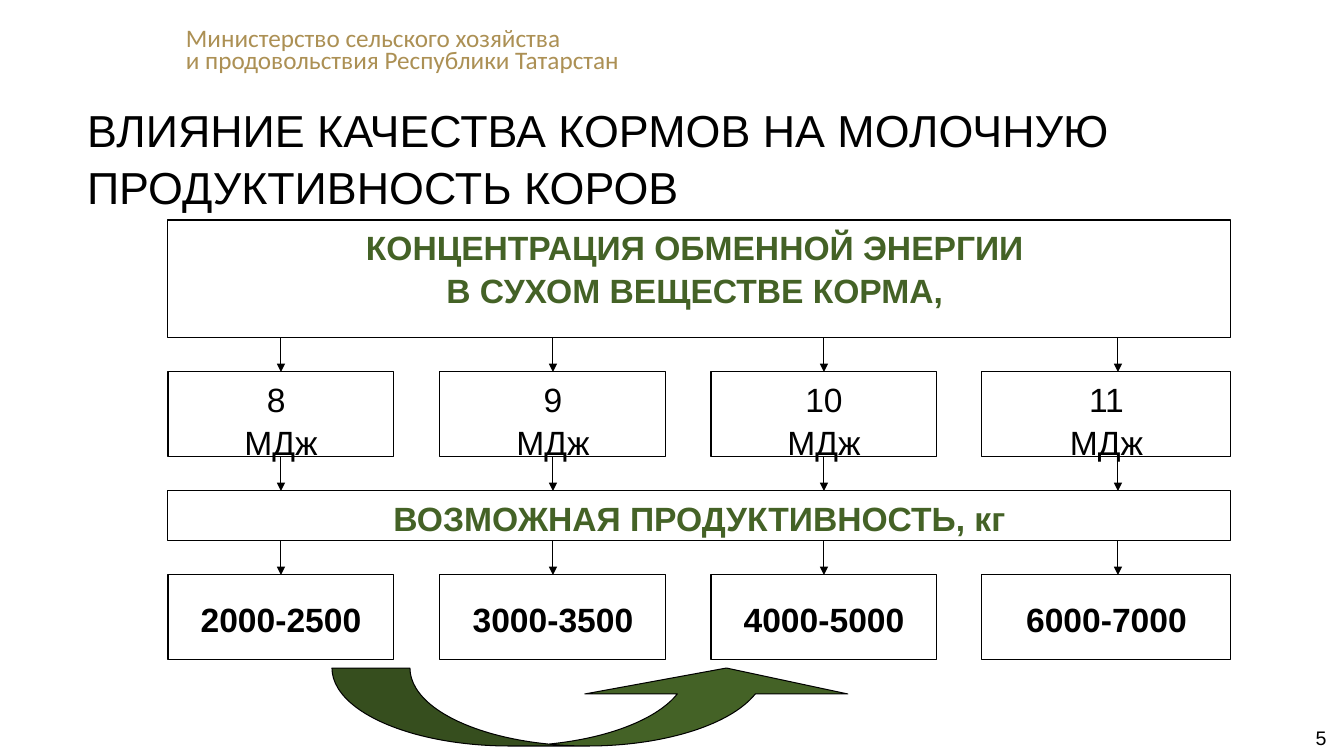
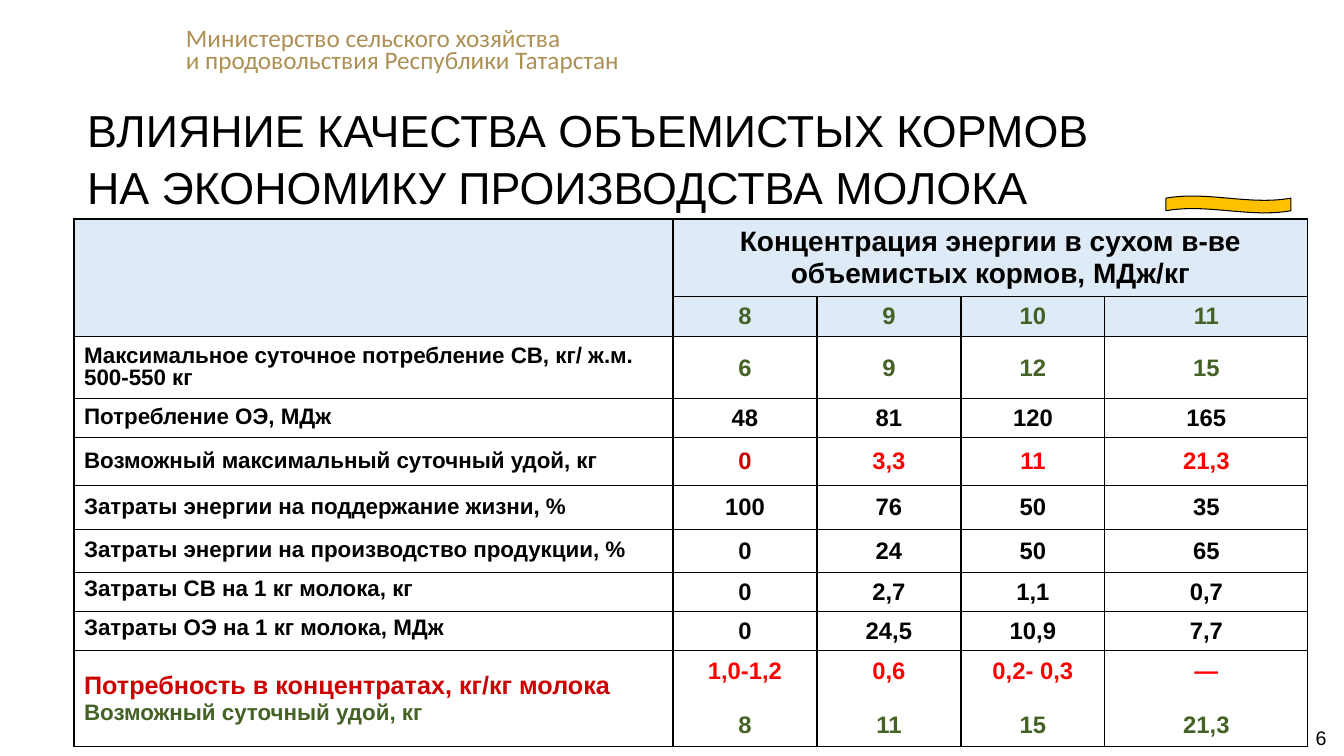
"""Build two slides on how fodder quality affects milk yield."""
import pptx
import pptx.util
import pptx.dml.color
import pptx.enum.shapes
import pptx.enum.text
import lxml.etree

PX = 914400 / 100.8
HUES = {"ink": "000000", "paper": "FFFFFF", "gold": "AC9054", "green": "446226",
        "pale": "DEEBF7", "dark": "CC0000", "red": "FF0000", "amber": "FFC000"}
NS = "http://schemas.openxmlformats.org/drawingml/2006/main"
SHAPE = pptx.enum.shapes.MSO_SHAPE
ALIGN = pptx.enum.text.PP_ALIGN
ANCHOR = pptx.enum.text.MSO_ANCHOR

GAP = 34
COLS = [599, 144, 144, 144, 203]
ROWS = [76, 40, 62, 39, 48, 44, 43, 39, 38, 96]
DATA = [
    ("Максимальное суточное потребление СВ, кг/ ж.м. 500-550 кг", "6 9 12 15", "green", 0.9),
    ("Потребление ОЭ, МДж", "48 81 120 165", "ink", 0.9),
    ("Возможный максимальный суточный удой, кг", "0 3,3 11 21,3", "red", 0.9),
    ("Затраты энергии на поддержание жизни, %", "100 76 50 35", "ink", 0.9),
    ("Затраты энергии на производство продукции, %", "0 24 50 65", "ink", 0.9),
    ("Затраты СВ на 1 кг молока, кг", "0 2,7 1,1 0,7", "ink", 0.6),
    ("Затраты ОЭ на 1 кг молока, МДж", "0 24,5 10,9 7,7", "ink", 0.6),
]
NEEDS = [("1,0-1,2", "8"), ("0,6", "11"), ("0,2- 0,3", "15"), ("—", "21,3")]


def px(num):
    """Turn px into EMU."""
    return pptx.util.Emu(round(num * PX))


def rgb(hue):
    """Look up a colour."""
    return pptx.dml.color.RGBColor.from_string(HUES[hue])


def write(frame, text, size=24, hue="ink", bold=False, font="Arial", align=ALIGN.LEFT,
          space=None, gap=0, more=False):
    """Write one paragraph into a frame, adding it after the rest if more is set."""
    para = frame.add_paragraph() if more else frame.paragraphs[0]
    para.text = text
    para.alignment = align
    if space:
        para.line_spacing = space
    if gap:
        para.space_before = pptx.util.Pt(gap)
    for run in para.runs:
        run.font.size = pptx.util.Pt(size)
        run.font.name = font
        run.font.bold = bold
        run.font.color.rgb = rgb(hue)


def label(slide, box):
    """Add an empty text box that wraps."""
    frame = slide.shapes.add_textbox(*map(px, box)).text_frame
    frame.word_wrap = True
    return frame


def block(slide, kind, box, fill):
    """Add a preset shape with a thin black line."""
    shape = slide.shapes.add_shape(kind, *map(px, box))
    shape.shadow.inherit = False
    shape.fill.solid()
    shape.fill.fore_color.rgb = rgb(fill)
    shape.line.color.rgb = rgb("ink")
    shape.line.width = pptx.util.Pt(0.75)
    return shape


def panel(slide, box, lines, hue="ink", bold=False, anchor=ANCHOR.TOP):
    """Add a white box with centred lines."""
    frame = block(slide, SHAPE.RECTANGLE, box, "paper").text_frame
    frame.vertical_anchor = anchor
    for idx, line in enumerate(lines):
        write(frame, line, hue=hue, bold=bold, align=ALIGN.CENTER, space=1.06, more=idx > 0)


def arrow(slide, x, top, end):
    """Draw a downward arrow."""
    line = slide.shapes.add_connector(pptx.enum.shapes.MSO_CONNECTOR.STRAIGHT,
                                      px(x), px(top), px(x), px(end))
    line.line.color.rgb = rgb("ink")
    line.line.width = pptx.util.Pt(0.75)
    lxml.etree.SubElement(line.line._get_or_add_ln(), f"{{{NS}}}tailEnd", type="triangle")
    lxml.etree.SubElement(line._element.spPr, f"{{{NS}}}effectLst")


def start(deck, title, num):
    """Add a slide with its header, title and number."""
    slide = deck.slides.add_slide(deck.slide_layouts[5])
    head = label(slide, (176, 26, 600, 54))
    for idx, line in enumerate(["Министерство сельского хозяйства",
                                "и продовольствия Республики Татарстан"]):
        write(head, line, size=18, hue="gold", font="Calibri", space=0.7, more=idx > 0)
    hold = slide.shapes.title
    hold.left, hold.top, hold.width, hold.height = map(px, (58, 94, 1285, 119))
    frame = hold.text_frame
    frame.auto_size = pptx.enum.text.MSO_AUTO_SIZE.NONE
    frame.vertical_anchor = ANCHOR.TOP
    frame.margin_left = px(29)
    write(frame, title, size=32, space=1.06)
    foot = label(slide, (1308, 726, 26, 23))
    foot.margin_left = foot.margin_right = foot.margin_top = foot.margin_bottom = 0
    write(foot, str(num), size=14, align=ALIGN.CENTER)
    return slide


def flow(slide, left, top, width):
    """Draw the chain from feed energy to milk yield."""
    step, slim = 271.5, 226
    spots = [left + round(idx * step) for idx in range(4)]
    wides = [slim] * 3 + [left + width - spots[3]]
    stems = [spot + slim / 2 for spot in spots[:3]] + [left + 950]
    tiers = [
        (118, ["КОНЦЕНТРАЦИЯ ОБМЕННОЙ ЭНЕРГИИ ", "В СУХОМ ВЕЩЕСТВЕ КОРМА, "]),
        (85, [["8 ", "МДж"], ["9", "МДж"], ["10", "МДж"], ["11", "МДж"]]),
        (50, ["ВОЗМОЖНАЯ ПРОДУКТИВНОСТЬ, кг"]),
        (85, [["2000-2500"], ["3000-3500"], ["4000-5000"], ["6000-7000"]]),
    ]
    for idx, (high, texts) in enumerate(tiers):
        if idx % 2 == 0:
            panel(slide, (left, top, width, high), texts, "green", True)
        else:
            last = idx == 3
            for spot, wide, lines in zip(spots, wides, texts):
                panel(slide, (spot, top, wide, high), lines, bold=last,
                      anchor=ANCHOR.MIDDLE if last else ANCHOR.TOP)
        top += high
        if idx < 3:
            for stem in stems:
                arrow(slide, stem, top, top + GAP)
            top += GAP
    bend = block(slide, SHAPE.CURVED_UP_ARROW, (left + 164, top + 8, 526, 78), "green")
    for idx, value in enumerate([10.2, 20.4, 0.333]):
        bend.adjustments[idx] = value


def edge(cell, fill=None):
    """Give a cell black borders and its fill."""
    prop = cell._tc.get_or_add_tcPr()
    for side in ("lnL", "lnR", "lnT", "lnB"):
        line = lxml.etree.SubElement(prop, f"{{{NS}}}{side}", w="12700")
        solid = lxml.etree.SubElement(line, f"{{{NS}}}solidFill")
        lxml.etree.SubElement(solid, f"{{{NS}}}srgbClr", val=HUES["ink"])
    if fill:
        cell.fill.solid()
        cell.fill.fore_color.rgb = rgb(fill)
    else:
        cell.fill.background()
    cell.vertical_anchor = ANCHOR.MIDDLE


def grid(slide, left, top):
    """Fill the table of feed energy and costs."""
    box = map(px, (left, top, sum(COLS), sum(ROWS)))
    table = slide.shapes.add_table(len(ROWS), len(COLS), *box).table
    for col, wide in zip(table.columns, COLS):
        col.width = px(wide)
    for idx, high in enumerate(ROWS):
        table.rows[idx].height = px(high)
        for col in range(len(COLS)):
            edge(table.cell(idx, col), "pale" if idx < 2 else None)
    table.cell(0, 0).merge(table.cell(1, 0))
    table.cell(0, 1).merge(table.cell(0, 4))

    def put(row, col, text, **form):
        """Write bold text in one cell."""
        base = {"size": 17, "bold": True, "align": ALIGN.CENTER if col else ALIGN.LEFT}
        write(table.cell(row, col).text_frame, text, **{**base, **form})

    put(0, 1, "Концентрация энергии в сухом в-ве объемистых кормов, МДж/кг", size=20)
    for col in range(1, 5):
        put(1, col, str(col + 7), hue="green")
    for row, (name, values, hue, space) in enumerate(DATA, 2):
        put(row, 0, name, size=16, space=space)
        for col, value in enumerate(values.split(), 1):
            put(row, col, value, hue="dark" if hue == "red" and col == 1 else hue)
    end = len(ROWS) - 1
    put(end, 0, "Потребность в концентратах, кг/кг молока", size=18, hue="dark")
    put(end, 0, "Возможный суточный удой, кг", size=16, hue="green", more=True)
    for col, (need, milk) in enumerate(NEEDS, 1):
        put(end, col, need, hue="red")
        put(end, col, milk, hue="green", gap=19, more=True)


def main():
    """Build and save the deck."""
    deck = pptx.Presentation()
    deck.slide_width, deck.slide_height = px(1344), px(756)
    slide = start(deck, "ВЛИЯНИЕ КАЧЕСТВА КОРМОВ НА МОЛОЧНУЮ ПРОДУКТИВНОСТЬ КОРОВ", 5)
    flow(slide, 168, 220, 1063)
    slide = start(deck, "ВЛИЯНИЕ КАЧЕСТВА ОБЪЕМИСТЫХ КОРМОВ\vНА ЭКОНОМИКУ ПРОИЗВОДСТВА МОЛОКА", 6)
    grid(slide, 74, 219)
    wave = block(slide, SHAPE.WAVE, (1166, 196, 125, 17), "amber")
    wave.adjustments[0], wave.adjustments[1] = 0.13, 0
    deck.save("out.pptx")


if __name__ == "__main__":
    main()
